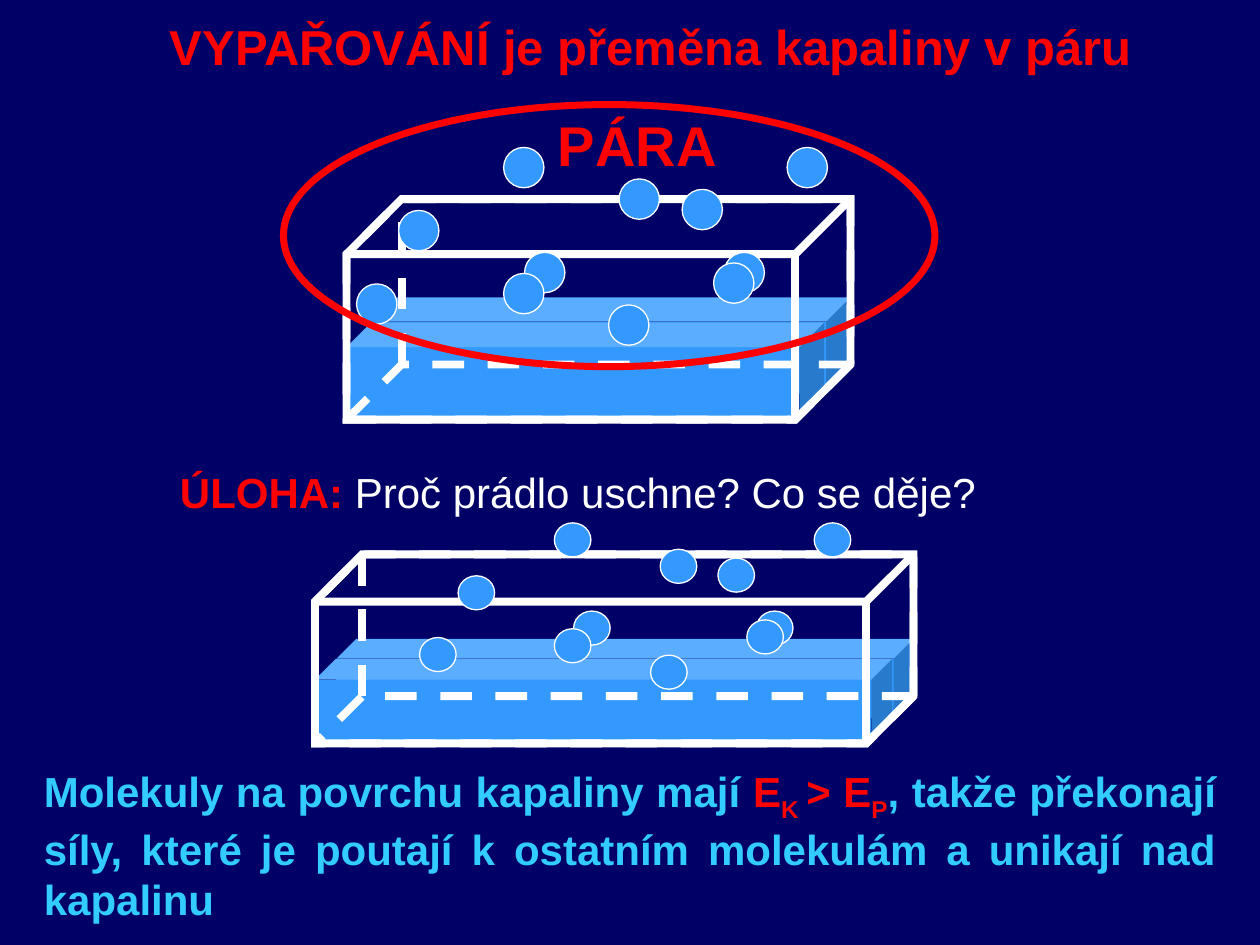
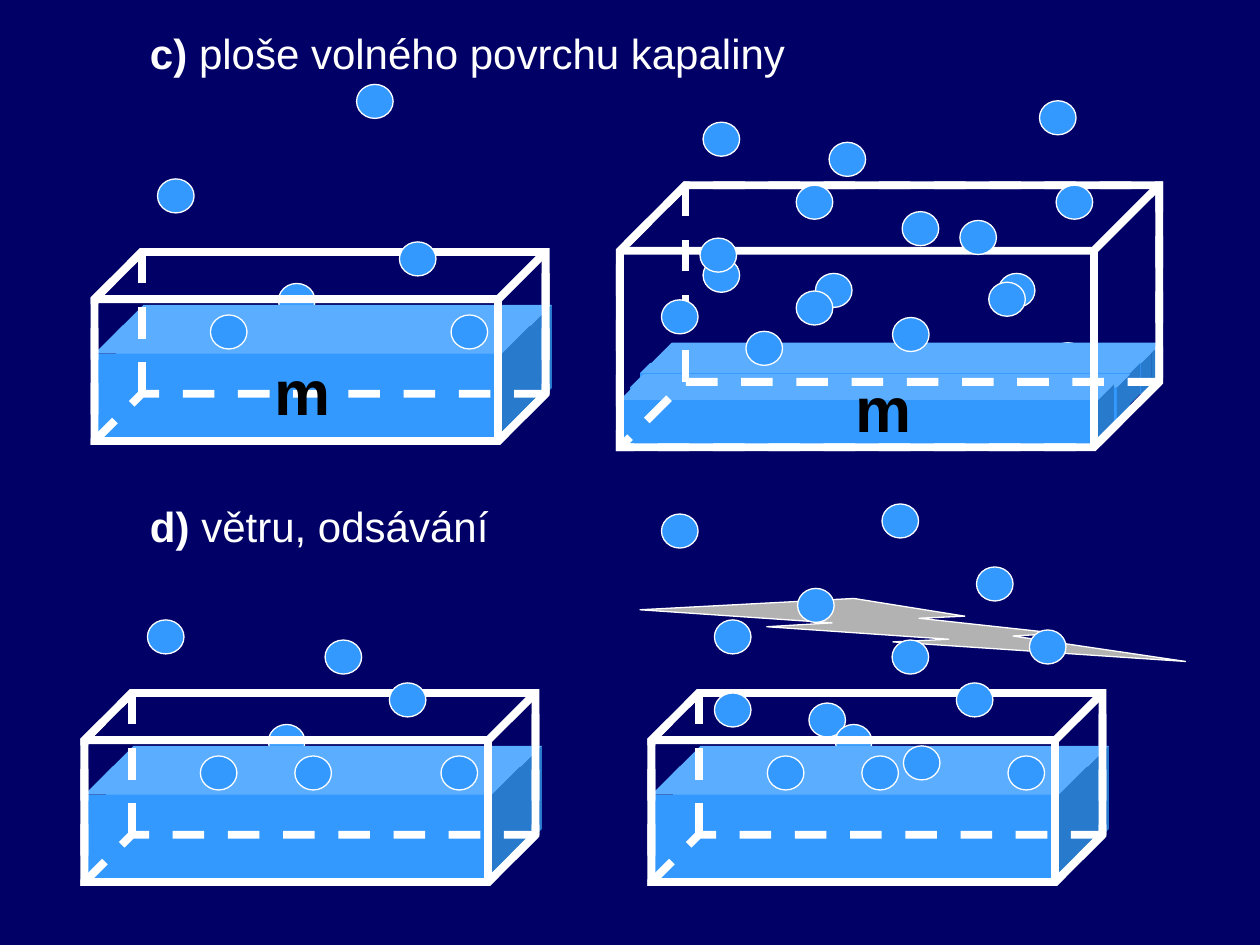
from dataclasses import dataclass
from typing import NamedTuple

from lxml import etree
from pptx import Presentation
from pptx import util as u
from pptx.dml.color import RGBColor
from pptx.enum import dml, shapes, text
from pptx.oxml import ns

NAVY = RGBColor(0x00, 0x00, 0x66)
WATER = RGBColor(0x33, 0x99, 0xFF)
SKY = RGBColor(0x33, 0xCC, 0xFF)
RED = RGBColor(0xFF, 0x00, 0x00)
WHITE = RGBColor(0xFF, 0xFF, 0xFF)
BLACK = RGBColor(0x00, 0x00, 0x00)
GREY = RGBColor(0xB2, 0xB2, 0xB2)
FONT = "Arial"
CM_PER_UNIT = 2.54
SHAPE = shapes.MSO_SHAPE


class Spot(NamedTuple):
    x: float
    y: float


class Area(NamedTuple):
    left: float
    top: float
    width: float
    height: float

    def moved(self, by: Spot) -> "Area":
        return Area(self.left + by.x, self.top + by.y, self.width, self.height)


class Span(NamedTuple):
    words: str
    color: RGBColor
    bold: bool = True
    subscript: bool = False


@dataclass(frozen=True)
class Outline:
    color: RGBColor
    points: float
    dashed: bool = False


@dataclass(frozen=True)
class Tank:
    frame: Area
    waters: tuple[Area, ...]


@dataclass(frozen=True)
class Cloud:
    origin: Spot
    step: Spot
    size: Spot


THIN = Outline(WHITE, 0.75)
EDGE = Outline(WHITE, 4.5)
HIDDEN_EDGE = Outline(WHITE, 4.5, dashed=True)
RING = Outline(RED, 4)

LARGE = Spot(0.32, 0.32)
SMALL = Spot(0.29, 0.27)
LARGE_STEP = Spot(1 / 12, 1 / 12)
SMALL_STEP = Spot(LARGE_STEP.x * 11 / 12, 0.07)
CLOUD_CELLS = [
    Spot(35, 10), Spot(16, 10), Spot(41, 0), Spot(24, 15), Spot(25, 3), Spot(0, 13),
    Spot(4, 6), Spot(34, 11), Spot(14, 12), Spot(14, 0), Spot(31, 4),
]

VAPOUR_TANK = Tank(
    Area(2.75, 1.58, 4, 1.75),
    (Area(2.96, 2.36, 3.79, 0.77), Area(2.75, 2.56, 3.79, 0.78)),
)
LAUNDRY_TANK = Tank(
    Area(2.5, 4.4, 4.75, 1.5),
    (Area(2.67, 5.07, 4.58, 0.63), Area(2.5, 5.23, 4.58, 0.66)),
)
WIDE_TANK = Tank(
    Area(4.92, 1.47, 4.28, 2.08),
    (
        Area(5.25, 2.72, 3.97, 0.33), Area(5.17, 2.8, 3.97, 0.33),
        Area(5.08, 2.88, 3.97, 0.33), Area(5, 2.97, 3.97, 0.42),
        Area(4.92, 3.05, 3.92, 0.5),
    ),
)
SMALL_FRAME = Area(0, 0, 3.58, 1.5)
SMALL_WATERS = (Area(0.17, 0.42, 3.46, 0.88), Area(0, 0.58, 3.46, 0.91))
SUBMERGED = [Spot(2.25, 0.58), Spot(1.46, 0.25)]
ESCAPING = [Spot(2.42, -0.08), Spot(2.83, 0.5), Spot(0.92, 0.5), Spot(0.5, -0.58)]
STILL_AIR = [Spot(1.91, -0.42), Spot(1.67, 0.5)]


def length(value: float) -> int:
    return u.Cm(value * CM_PER_UNIT)


def lengths(area: Area) -> list[int]:
    return [length(value) for value in area]


def add_figure(page, kind, area: Area, fill: RGBColor | None = None,
               outline: Outline | None = None):
    figure = page.shapes.add_shape(kind, *lengths(area))
    figure.shadow.inherit = False
    if fill is None:
        figure.fill.background()
    else:
        figure.fill.solid()
        figure.fill.fore_color.rgb = fill
    if outline is None:
        figure.line.fill.background()
        return figure
    figure.line.color.rgb = outline.color
    figure.line.width = u.Pt(outline.points)
    if outline.dashed:
        figure.line.dash_style = dml.MSO_LINE.DASH
    if kind == SHAPE.CUBE:
        border = figure.line._get_or_add_ln()
        etree.SubElement(border, ns.qn("a:miter")).set("lim", "800000")
    return figure


def add_cube(page, area: Area, fill: RGBColor | None = None,
             outline: Outline | None = None):
    cube = add_figure(page, SHAPE.CUBE, area, fill, outline)
    cube.adjustments[0] = 0.25
    return cube


def add_tank(page, tank: Tank) -> None:
    for water in tank.waters:
        add_cube(page, water, WATER)
    add_cube(page, tank.frame, outline=EDGE)
    add_cube(page, tank.frame, outline=HIDDEN_EDGE).rotation = 180


def add_molecules(page, spots: list[Spot], origin: Spot = Spot(0, 0),
                  size: Spot = SMALL) -> None:
    for spot in spots:
        area = Area(*spot, *size).moved(origin)
        add_figure(page, SHAPE.OVAL, area, WATER, THIN)


def add_cloud(page, cloud: Cloud) -> None:
    spots = [Spot(cell.x * cloud.step.x, cell.y * cloud.step.y) for cell in CLOUD_CELLS]
    add_molecules(page, spots, cloud.origin, cloud.size)


def add_small_tank(page, corner: Spot, extra_submerged: list[Spot],
                   extra_escaping: list[Spot]) -> None:
    waters = tuple(water.moved(corner) for water in SMALL_WATERS)
    add_molecules(page, extra_submerged + SUBMERGED, corner)
    add_tank(page, Tank(SMALL_FRAME.moved(corner), waters))
    add_molecules(page, ESCAPING + extra_escaping, corner)


def add_words(page, area: Area, size: float, spans: list[Span], wrap: bool = True,
              justified: bool = False, line_spacing: float | None = None) -> None:
    box = page.shapes.add_textbox(*lengths(area))
    box.text_frame.word_wrap = wrap
    para = box.text_frame.paragraphs[0]
    para.line_spacing = line_spacing
    if justified:
        para.alignment = text.PP_ALIGN.JUSTIFY
    for span in spans:
        run = para.add_run()
        run.text = span.words
        run.font.name = FONT
        run.font.size = u.Pt(size)
        run.font.bold = span.bold
        run.font.color.rgb = span.color
        if span.subscript:
            run.font._element.set("baseline", "-25000")


def add_factor(page, top: float, letter: str, factor: str) -> None:
    spans = [Span(f" {letter}) ", WHITE), Span(factor, WHITE, bold=False)]
    add_words(page, Area(1, top, 6, 0.42), 24, spans, line_spacing=0.8)


def add_mass(page, left: float, top: float) -> None:
    add_words(page, Area(left, top, 0.65, 0.7), 36, [Span("m", BLACK)], wrap=False)


def add_page(deck):
    page = deck.slides.add_slide(deck.slide_layouts[6])
    page.background.fill.solid()
    page.background.fill.fore_color.rgb = NAVY
    return page


def build_evaporation(deck) -> None:
    page = add_page(deck)
    add_words(page, Area(1.25, 0.08, 9.08, 0.68), 28,
              [Span("VYPAŘOVÁNÍ je přeměna kapaliny v páru", RED)])
    add_words(page, Area(1.33, 3.65, 7.5, 0.5), 24,
              [Span("ÚLOHA:", RED),
               Span(" Proč prádlo uschne? Co se děje?", WHITE, bold=False)])
    add_words(page, Area(0.25, 6.03, 9.5, 1.3), 24, [
        Span("Molekuly na povrchu kapaliny mají ", SKY),
        Span("E", RED),
        Span("K ", RED, subscript=True),
        Span("> E", RED),
        Span("P", RED, subscript=True),
        Span(", takže překonají síly, které je poutají k ostatním molekulám "
             "a unikají nad kapalinu", SKY),
    ], justified=True)
    add_tank(page, LAUNDRY_TANK)
    add_cloud(page, Cloud(Spot(3.33, 4.15), SMALL_STEP, SMALL))
    add_tank(page, VAPOUR_TANK)
    add_cloud(page, Cloud(Spot(2.83, 1.17), LARGE_STEP, LARGE))
    add_words(page, Area(4.33, 0.83, 1.46, 0.63), 32, [Span("PÁRA", RED)], wrap=False)
    add_figure(page, SHAPE.OVAL, Area(2.25, 0.83, 5.17, 2.08), outline=RING)


def build_factors(deck) -> None:
    page = add_page(deck)
    add_factor(page, 0.25, "c", "ploše volného povrchu kapaliny")
    add_small_tank(page, Spot(0.75, 2), [], [Spot(2.08, -1.33)])
    add_mass(page, 2.08, 2.75)

    add_molecules(page, [Spot(8.33, 2.72), Spot(5.58, 0.97), Spot(5.58, 2.05),
                         Spot(8.25, 0.8), Spot(6.58, 1.13)])
    add_tank(page, WIDE_TANK)
    add_mass(page, 6.69, 2.88)
    add_cloud(page, Cloud(Spot(5.25, 1.47), SMALL_STEP, SMALL))
    add_molecules(page, [Spot(5.92, 2.63)])

    add_factor(page, 4, "d", "větru, odsávání")
    add_small_tank(page, Spot(0.67, 5.5), [], STILL_AIR)
    add_figure(page, SHAPE.LIGHTNING_BOLT, Area(5.08, 4.75, 4.33, 0.5), GREY, THIN)
    blown_away = [Spot(3, -0.5), Spot(2.58, -1), Spot(0.5, 0), Spot(2, 0.42),
                  Spot(1.16, -0.83), Spot(0.08, -1.42), Spot(1.83, -1.5)]
    add_small_tank(page, Spot(5.17, 5.5), [Spot(1.25, 0.08)], STILL_AIR + blown_away)


def main() -> None:
    deck = Presentation()
    deck.slide_width = length(10)
    deck.slide_height = length(7.5)
    build_evaporation(deck)
    build_factors(deck)
    deck.save("out.pptx")


if __name__ == "__main__":
    main()
